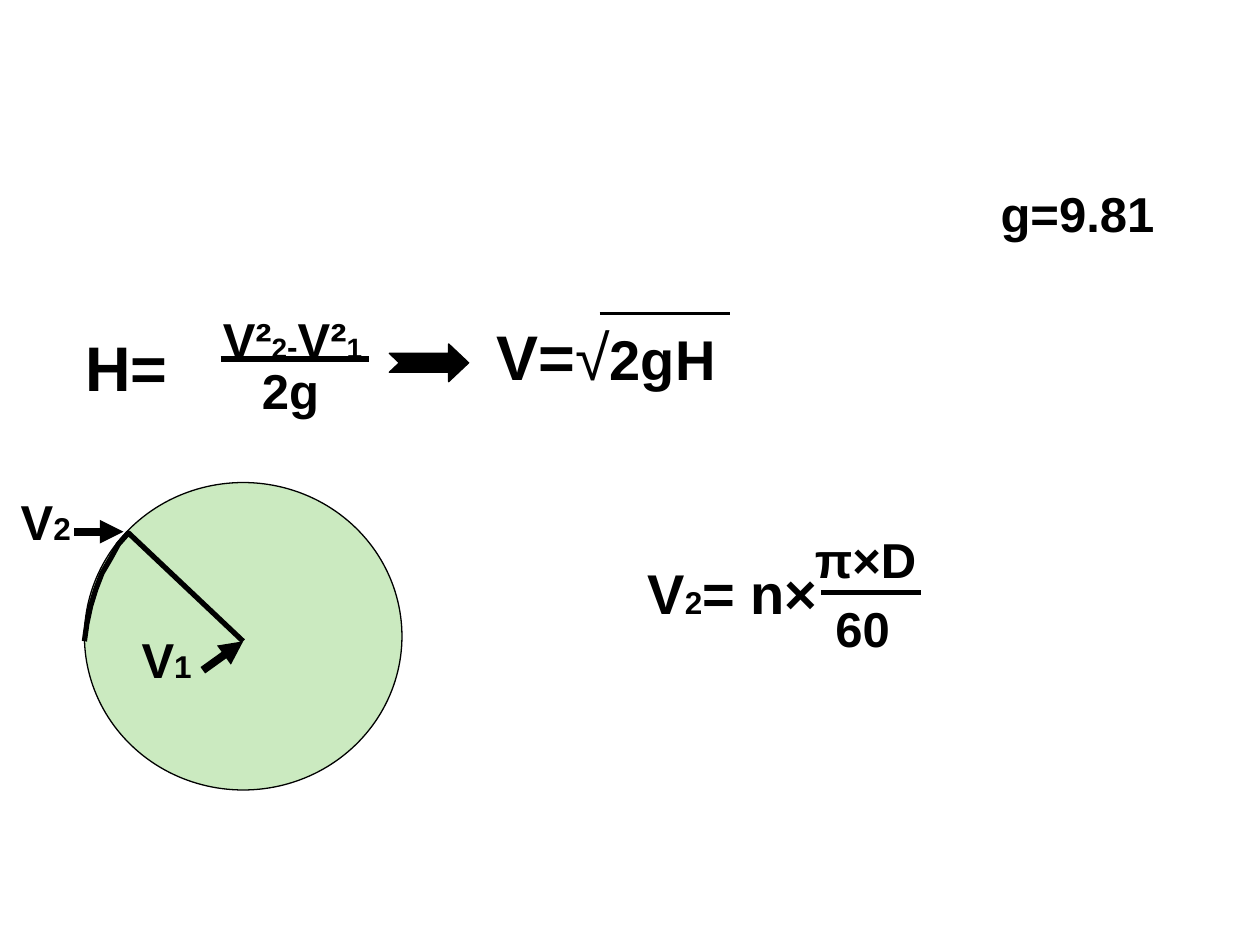
"""Build the slide of pump head and impeller velocity formulas."""
from lxml.etree import SubElement
from pptx import Presentation
from pptx.dml.color import RGBColor
from pptx.enum.shapes import MSO_CONNECTOR, MSO_SHAPE
from pptx.enum.text import MSO_AUTO_SIZE, PP_ALIGN
from pptx.oxml.ns import qn
from pptx.util import Pt

PX = 9144
BLACK = "000000"


def color(hex_string):
    return RGBColor.from_string(hex_string)


def add_text(runs, left, top, width, height, align=PP_ALIGN.LEFT, wrap=True):
    box = slide.shapes.add_textbox(left * PX, top * PX, width * PX, height * PX)
    frame = box.text_frame
    frame.word_wrap = wrap
    frame.auto_size = MSO_AUTO_SIZE.SHAPE_TO_FIT_TEXT
    paragraph = frame.paragraphs[0]
    paragraph.alignment = align
    for text, size in runs:
        run = paragraph.add_run()
        run.text = text
        run.font.name = "Arial"
        run.font.size = Pt(size)
        run.font.bold = text != "√"
        run.font.color.rgb = color(BLACK)


presentation = Presentation()
presentation.slide_width = 1000 * PX
presentation.slide_height = 750 * PX
slide = presentation.slides.add_slide(presentation.slide_layouts[6])

impeller = slide.shapes.add_shape(MSO_SHAPE.OVAL, 67 * PX, 383 * PX, 252 * PX, 244 * PX)
implies = slide.shapes.add_shape(
    MSO_SHAPE.NOTCHED_RIGHT_ARROW, 309 * PX, 273 * PX, 63 * PX, 30 * PX)
implies.adjustments[0] = 0.5
implies.adjustments[1] = 0.53
for part, fill in ((impeller, "CBEAC0"), (implies, BLACK)):
    part.shadow.inherit = False
    part.fill.solid()
    part.fill.fore_color.rgb = color(fill)
    part.line.color.rgb = color(BLACK)
    part.line.width = Pt(0.75)

blade_points = [(102, 423), (94, 432), (88, 443), (81, 455),
                (76, 468), (72, 481), (69, 495), (67, 509)]
outline = slide.shapes.build_freeform(193, 509, scale=PX)
outline.add_line_segments(blade_points, close=False)
blade = outline.convert_to_shape()
blade.shadow.inherit = False
blade.fill.background()
blade.line.color.rgb = color(BLACK)
blade.line.width = Pt(3)

strokes = [
    (161, 532, 193, 509, 4.5, True),
    (59, 422, 98, 422, 4.5, True),
    (476, 249, 579, 249, 1.5, False),
    (652, 470, 731, 470, 3, False),
    (175, 285, 293, 285, 3, False),
]
for x1, y1, x2, y2, weight, pointed in strokes:
    stroke = slide.shapes.add_connector(
        MSO_CONNECTOR.STRAIGHT, x1 * PX, y1 * PX, x2 * PX, y2 * PX)
    stroke.line.color.rgb = color(BLACK)
    stroke.line.width = Pt(weight)
    if pointed:
        SubElement(stroke.line._get_or_add_ln(), qn("a:tailEnd"), type="triangle")
    SubElement(stroke._element.spPr, qn("a:effectLst"))

add_text([("V", 28), ("1", 18)], 102, 495, 60, 57, align=PP_ALIGN.RIGHT, wrap=False)
add_text([("V", 28), ("2", 18)], -1, 385, 67, 57, align=PP_ALIGN.RIGHT)

add_text([("H=", 36)], 58, 256, 85, 70, wrap=False)
add_text([("V²", 28), ("2", 16), ("-", 18), ("V²", 28), ("1", 16)], 167, 241, 213, 57)
add_text([("2g", 28)], 198, 281, 66, 57, wrap=False)
add_text([("V=", 36), ("√", 36), ("2gH", 32)], 384, 247, 252, 70)
add_text([("g=9.81", 28)], 783, 141, 143, 57, align=PP_ALIGN.RIGHT, wrap=False)

add_text([("V", 32), ("2", 18), ("= n×", 32)], 504, 438, 164, 63)
add_text([("π×D", 28)], 637, 415, 130, 57)
add_text([("60", 28)], 652, 470, 64, 57, align=PP_ALIGN.RIGHT, wrap=False)

presentation.save("out.pptx")
